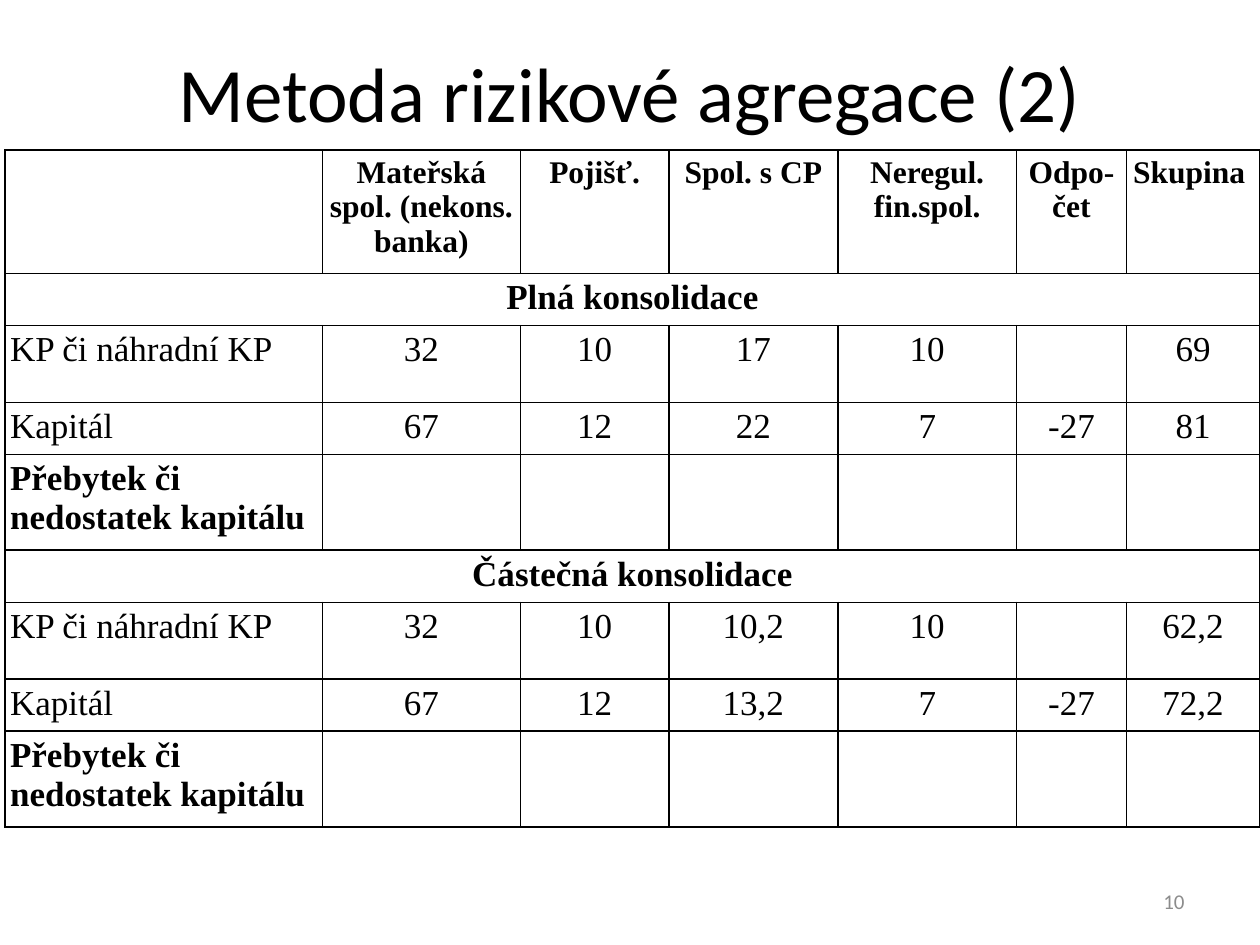
from dataclasses import dataclass

from lxml.etree import SubElement
from pptx import Presentation
from pptx.dml.color import RGBColor
from pptx.enum.text import MSO_ANCHOR, PP_ALIGN
from pptx.oxml.ns import qn
from pptx.util import Inches, Pt


@dataclass(frozen=True)
class Theme:
    ink: str = "000000"
    gray: str = "8C8C8C"
    sans: str = "Calibri"
    serif: str = "Times New Roman"
    title: int = 44
    body: int = 20
    head: int = 18
    small: int = 12
    line: int = 1


THEME = Theme()
PAD = Inches(0.04)
COLS = [2.52, 1.57, 1.18, 1.34, 1.42, 0.87, 1.06]
HEADS = ["", "Mateřská spol. (nekons. banka)", "Pojišť.", "Spol. s CP",
         "Neregul. fin.spol.", "Odpo-čet", "Skupina "]
LABELS = ["KP či náhradní KP", "Kapitál", "Přebytek či nedostatek kapitálu"]
HEAD_ROW = 0.91
BLOCK_ROWS = [0.39, 0.61, 0.39, 0.76]
BLOCKS = [
    ("Plná konsolidace",
     [["32", "10", "17", "10", "", "69"],
      ["67", "12", "22", "7", "-27", "81"],
      [""] * 6]),
    ("Částečná konsolidace",
     [["32", "10", "10,2", "10", "", "62,2"],
      ["67", "12", "13,2", "7", "-27", "72,2"],
      [""] * 6]),
]


def write(frame, text, face, size, color, align, bold=False):
    frame.word_wrap = True
    para = frame.paragraphs[0]
    para.text = text
    para.alignment = align
    font = para.font
    font.name, font.size, font.bold = face, Pt(size), bold
    font.color.rgb = RGBColor.from_string(color)


def add_label(slide, area, text, size, color, align):
    box = slide.shapes.add_textbox(*map(Inches, area))
    box.text_frame.vertical_anchor = MSO_ANCHOR.MIDDLE
    write(box.text_frame, text, THEME.sans, size, color, align)


def add_edges(cell):
    props = cell._tc.get_or_add_tcPr()
    for side in ("a:lnL", "a:lnR", "a:lnT", "a:lnB"):
        line = SubElement(props, qn(side), w=str(Pt(THEME.line)))
        fill = SubElement(line, qn("a:solidFill"))
        SubElement(fill, qn("a:srgbClr"), val=THEME.ink)


def fill_cell(cell, text, size, align, bold):
    cell.margin_left = cell.margin_right = PAD
    cell.margin_top = cell.margin_bottom = PAD
    add_edges(cell)
    cell.fill.background()
    write(cell.text_frame, text, THEME.serif, size, THEME.ink, align, bold)


def fill_row(table, row, texts, size, bold, first=PP_ALIGN.CENTER):
    for col, text in enumerate(texts):
        align = PP_ALIGN.CENTER if col else first
        fill_cell(table.cell(row, col), text, size, align, bold)


def fill_block(table, top, name, values):
    fill_row(table, top, [name] + [""] * (len(COLS) - 1), THEME.body, True)
    table.cell(top, 0).merge(table.cell(top, len(COLS) - 1))
    for row, (label, nums) in enumerate(zip(LABELS, values), top + 1):
        bold = label == LABELS[-1]
        fill_row(table, row, [label] + nums, THEME.body, bold, PP_ALIGN.LEFT)


def add_grid(slide):
    rows = [HEAD_ROW] + BLOCK_ROWS * len(BLOCKS)
    area = map(Inches, (0.04, 1.19, sum(COLS), sum(rows)))
    table = slide.shapes.add_table(len(rows), len(COLS), *area).table
    table.first_row = table.horz_banding = False
    for col, width in zip(table.columns, COLS):
        col.width = Inches(width)
    for row, height in zip(table.rows, rows):
        row.height = Inches(height)
    fill_row(table, 0, HEADS, THEME.head, True)
    for index, (name, values) in enumerate(BLOCKS):
        fill_block(table, 1 + index * len(BLOCK_ROWS), name, values)


def main():
    deck = Presentation()
    deck.slide_width, deck.slide_height = Inches(10), Inches(7.5)
    slide = deck.slides.add_slide(deck.slide_layouts[6])
    add_label(slide, (0.5, 0.3, 9, 0.85), "Metoda rizikové agregace (2)",
              THEME.title, THEME.ink, PP_ALIGN.CENTER)
    add_label(slide, (7.17, 6.95, 2.33, 0.4), "10",
              THEME.small, THEME.gray, PP_ALIGN.RIGHT)
    add_grid(slide)
    deck.save("out.pptx")


if __name__ == "__main__":
    main()
